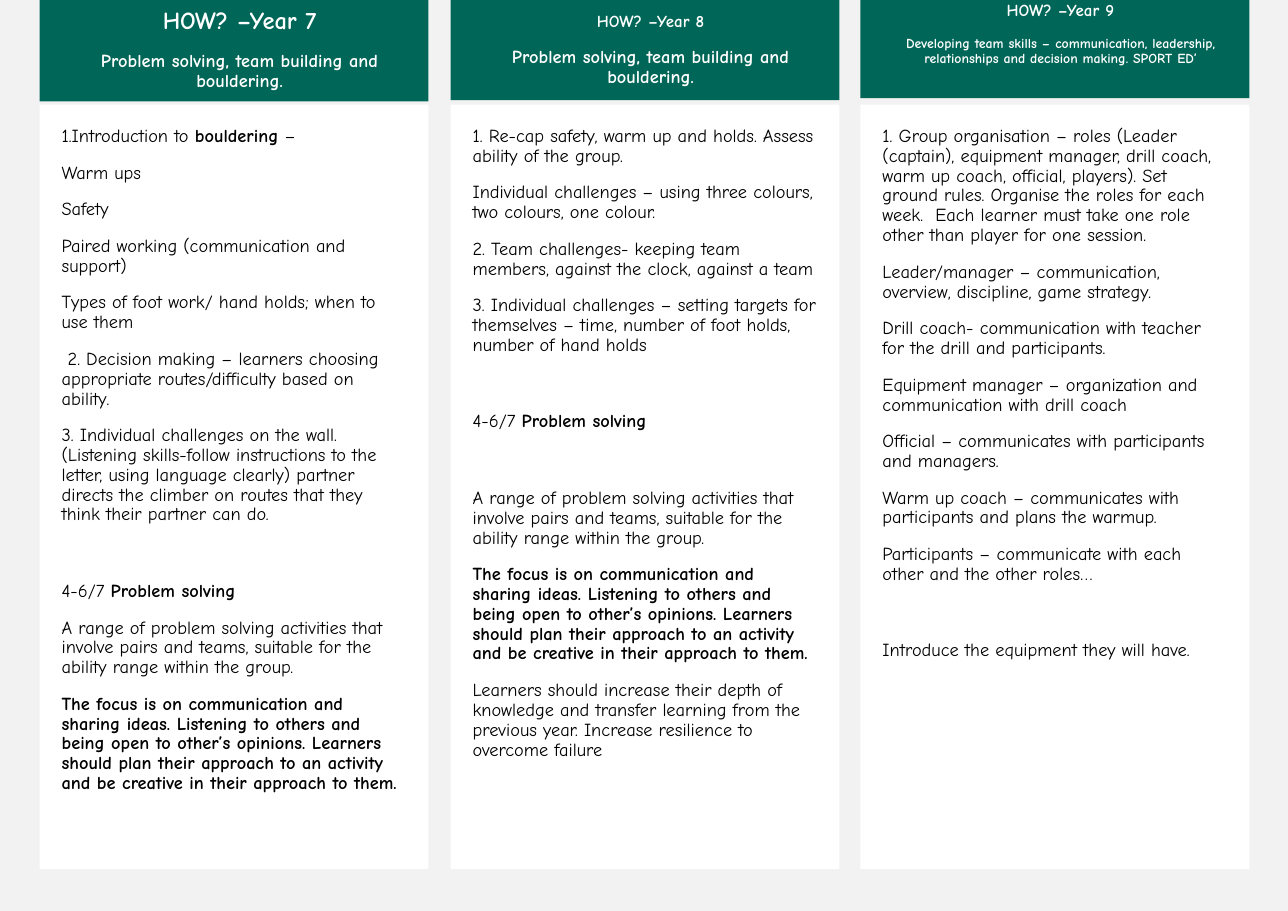
from pptx import Presentation
from pptx.dml.color import RGBColor
from pptx.enum.shapes import MSO_SHAPE as Shape
from pptx.enum.text import MSO_ANCHOR as Anchor, PP_ALIGN as Align
from pptx.util import Pt

GREEN = RGBColor(0x00, 0x67, 0x58)
WHITE = RGBColor(0xFF, 0xFF, 0xFF)
BLACK = RGBColor(0x00, 0x00, 0x00)
GREY = RGBColor(0xF2, 0xF2, 0xF2)
FONT = "Comic Neue"

PX = 9144
SLIDE_WIDTH, SLIDE_HEIGHT = 1169, 827
COLUMN_LEFTS = (36, 409, 781)
COLUMN_WIDTH = 353
BODY_TOP, BODY_HEIGHT = 95, 694
BODY_INSETS = (20, 20, 20, 20)
GAP, WIDE_GAP = 11, 37

BOULDERING = "Problem solving, team building and bouldering."
ACTIVITIES = (
    "A range of problem solving activities that involve pairs and teams, "
    "suitable for the ability range within the group."
)
FOCUS = (
    "*The focus is on communication and sharing ideas. Listening to others and "
    "being open to other’s opinions. Learners should plan their approach to an "
    "activity and be creative in their approach to them.*"
)
PROBLEM_SOLVING = "4-6/7 *Problem solving*"

YEARS = [
    {
        "header": [("*HOW? –Year 7*", 16, GAP), (f"*{BOULDERING}*", 12, GAP)],
        "top": -1, "height": 93, "bottom_inset": 5,
        "body": [
            ("1.Introduction to *bouldering* –", GAP),
            ("Warm ups", GAP),
            ("Safety", GAP),
            ("Paired working (communication and support)", GAP),
            ("Types of foot work/ hand holds; when to use them", GAP),
            (" 2. Decision making – learners choosing appropriate "
             "routes/difficulty based on ability.", GAP),
            ("3. Individual challenges on the wall. (Listening skills-follow "
             "instructions to the letter, using language clearly) partner directs "
             "the climber on routes that they think their partner can do.", GAP),
            (PROBLEM_SOLVING, WIDE_GAP),
            (ACTIVITIES, GAP),
            (FOCUS, GAP),
        ],
    },
    {
        "header": [("*HOW? –Year 8*", 11, GAP), (f"*{BOULDERING}*", 12, GAP)],
        "top": 0, "height": 91, "bottom_inset": 5,
        "body": [
            ("1. Re-cap safety, warm up and holds. Assess ability of the group.", GAP),
            ("Individual challenges – using three colours, two colours, one colour.", GAP),
            ("2. Team challenges- keeping team members, against the clock, "
             "against a team", GAP),
            ("3. Individual challenges – setting targets for themselves – time, "
             "number of foot holds, number of hand holds", GAP),
            (PROBLEM_SOLVING, WIDE_GAP),
            (ACTIVITIES, WIDE_GAP),
            (FOCUS, GAP),
            ("Learners should increase their depth of knowledge and transfer learning "
             "from the previous year. Increase resilience to overcome failure", GAP),
        ],
    },
    {
        "header": [
            ("*HOW? –Year 9*", 11, GAP),
            ("*Developing team skills – communication, leadership, relationships "
             "and decision making. SPORT ED’*", 9, GAP),
        ],
        "top": 0, "height": 89, "bottom_inset": 32,
        "body": [
            ("1. Group organisation – roles (Leader (captain), equipment manager, drill "
             "coach, warm up coach, official, players). Set ground rules. Organise the "
             "roles for each week.  Each learner must take one role other than player "
             "for one session.", GAP),
            ("Leader/manager – communication, overview, discipline, game strategy.", GAP),
            ("Drill coach- communication with teacher for the drill and participants.", GAP),
            ("Equipment manager – organization and communication with drill coach", GAP),
            ("Official – communicates with participants and managers.", GAP),
            ("Warm up coach – communicates with participants and plans the warmup.", GAP),
            ("Participants – communicate with each other and the other roles…", GAP),
            ("Introduce the equipment they will have.", WIDE_GAP),
        ],
    },
]


def add_panel(slide, box, fill, insets, anchor):
    panel = slide.shapes.add_shape(Shape.RECTANGLE, *(value * PX for value in box))
    panel.shadow.inherit = False
    panel.fill.solid()
    panel.fill.fore_color.rgb = fill
    panel.line.fill.background()
    frame = panel.text_frame
    frame.word_wrap = True
    frame.vertical_anchor = anchor
    (frame.margin_left, frame.margin_top,
     frame.margin_right, frame.margin_bottom) = (inset * PX for inset in insets)
    return frame


def write_paragraphs(frame, lines, color, alignment):
    for index, (text, size, gap) in enumerate(lines):
        paragraph = frame.add_paragraph() if index else frame.paragraphs[0]
        paragraph.alignment = alignment
        paragraph.line_spacing = 0.9
        paragraph.space_before = Pt(gap)
        paragraph.font.name = FONT
        paragraph.font.size = Pt(size)
        paragraph.font.color.rgb = color
        for position, part in enumerate(text.split("*")):
            if part:
                run = paragraph.add_run()
                run.text = part
                run.font.bold = position % 2 == 1


def main():
    presentation = Presentation()
    presentation.slide_width = SLIDE_WIDTH * PX
    presentation.slide_height = SLIDE_HEIGHT * PX
    slide = presentation.slides.add_slide(presentation.slide_layouts[6])
    slide.background.fill.solid()
    slide.background.fill.fore_color.rgb = GREY

    for left, year in zip(COLUMN_LEFTS, YEARS):
        body = add_panel(slide, (left, BODY_TOP, COLUMN_WIDTH, BODY_HEIGHT),
                         WHITE, BODY_INSETS, Anchor.TOP)
        body_lines = [(text, 12, gap) for text, gap in year["body"]]
        write_paragraphs(body, body_lines, BLACK, Align.LEFT)
        header = add_panel(slide, (left, year["top"], COLUMN_WIDTH, year["height"]),
                           GREEN, (20, 5, 10, year["bottom_inset"]), Anchor.MIDDLE)
        write_paragraphs(header, year["header"], WHITE, Align.CENTER)

    presentation.save("out.pptx")


if __name__ == "__main__":
    main()
